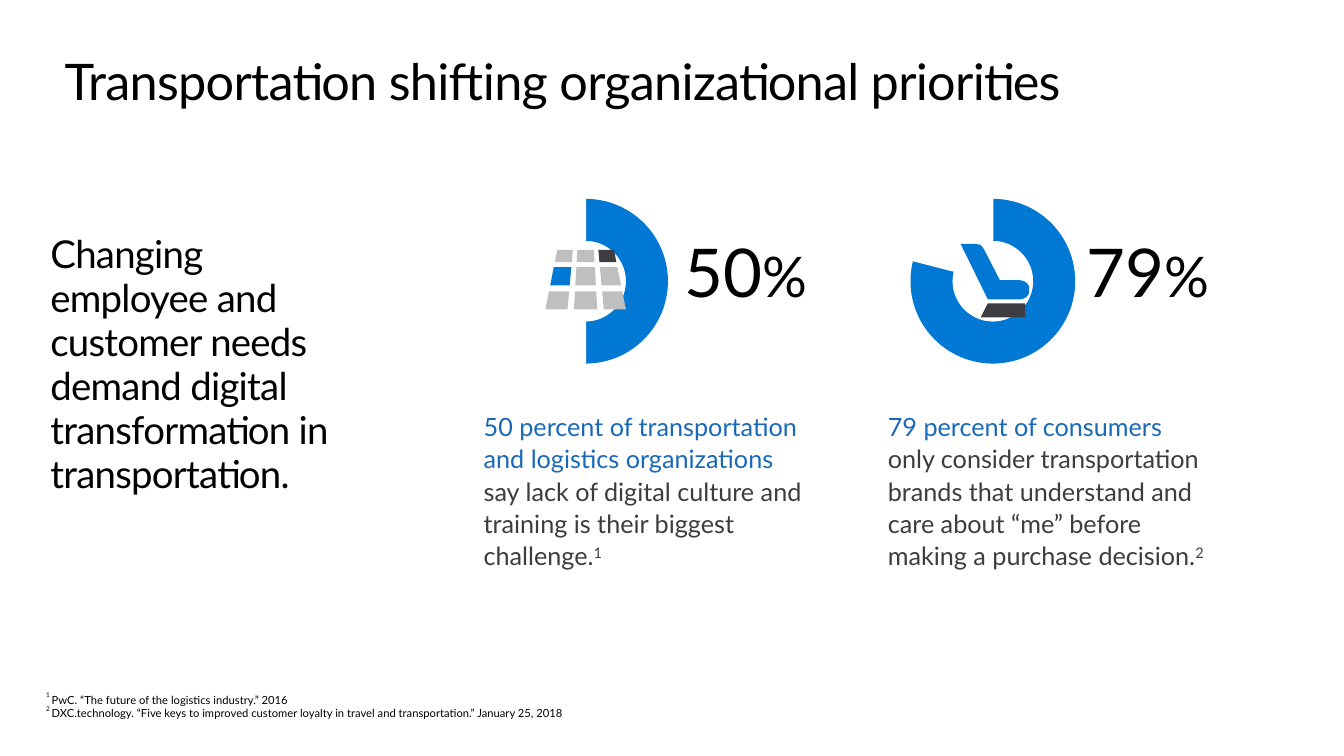
from lxml import etree
from pptx import Presentation
from pptx.chart.data import CategoryChartData
from pptx.dml.color import RGBColor
from pptx.enum.chart import XL_CHART_TYPE
from pptx.enum.text import MSO_AUTO_SIZE
from pptx.oxml.ns import qn
from pptx.util import Emu, Inches, Pt

DOUGHNUT = XL_CHART_TYPE.DOUGHNUT
GROW = MSO_AUTO_SIZE.SHAPE_TO_FIT_TEXT
BLACK = RGBColor(0x00, 0x00, 0x00)
WHITE = RGBColor(0xFF, 0xFF, 0xFF)
BLUE = RGBColor(0x00, 0x78, 0xD4)
LINK_BLUE = RGBColor(0x1A, 0x69, 0xB9)
DARK = RGBColor(0x3C, 0x3C, 0x41)
GRAY = RGBColor(0xBF, 0xBF, 0xBF)
FONT = "Lato"
SLIDE_W, SLIDE_H = Inches(13.333), Inches(7.5)
ROWS = 90
CELL = SLIDE_H / ROWS

CHART_W, CHART_H = 30, 22.8
TILE_ROWS = [(-3.72, -2.28), (-1.68, 0.48), (1.2, 3.36)]
TILE_COLS = [(-1, -0.45), (-0.29, 0.29), (0.45, 1)]
TILE_COLORS = {(0, 2): DARK, (1, 0): BLUE}
SEAT = [(4.32, 0.6), (4.08, 0.24), (3.72, 0), (3.24, -0.12), (0.84, -0.12),
        (-1.08, -3.84), (-1.44, -4.32), (-2.04, -4.44), (-3.84, -4.44),
        (-0.6, 2.16), (3.24, 2.16), (3.72, 2.04), (4.08, 1.8), (4.32, 1.44)]
SEAT_BASE = [(-0.6, 2.64), (-1.44, 4.32), (3.84, 4.32), (3.84, 2.64)]


def cells(*values):
    return [Emu(round(v * CELL)) for v in values]


def add_text(s, box, paragraphs, size, color=BLACK, inset=True,
             line_spacing=None, space_after=None, spc=None):
    tf = s.shapes.add_textbox(*cells(*box)).text_frame
    tf.word_wrap = True
    tf.auto_size = GROW
    if not inset:
        tf.margin_left = tf.margin_right = tf.margin_top = tf.margin_bottom = 0
    for i, runs in enumerate(paragraphs):
        p = tf.paragraphs[0] if i == 0 else tf.add_paragraph()
        p.line_spacing = line_spacing
        p.space_after = space_after
        for text, style in runs:
            r = p.add_run()
            r.text = text
            r.font.name = FONT
            r.font.size = Pt(style.get("size", size))
            r.font.color.rgb = style.get("color", color)
            if spc:
                r.font._element.set("spc", str(spc))
            if "raised" in style:
                r.font._element.set("baseline", str(style["raised"] * 1000))


def add_polygon(s, center, points, color):
    cx, cy = center
    outline = [cells(cx + x, cy + y) for x, y in points]
    builder = s.shapes.build_freeform(*outline[0])
    builder.add_line_segments(outline[1:])
    sp = builder.convert_to_shape()
    sp.shadow.inherit = False
    sp.fill.solid()
    sp.fill.fore_color.rgb = color
    sp.line.fill.background()


def draw_tiles(s, center):
    def half_width(y):
        return 4.12 + 0.2 * y

    for i, (top, bottom) in enumerate(TILE_ROWS):
        for j, (left, right) in enumerate(TILE_COLS):
            upper, lower = half_width(top), half_width(bottom)
            corners = [(left * upper, top), (right * upper, top),
                       (right * lower, bottom), (left * lower, bottom)]
            add_polygon(s, center, corners, TILE_COLORS.get((i, j), GRAY))


def draw_seat(s, center):
    add_polygon(s, center, SEAT_BASE, DARK)
    add_polygon(s, center, SEAT, BLUE)


def add_doughnut(s, box, percent):
    data = CategoryChartData()
    data.categories = ["1", "2"]
    data.add_series("Series 1", [percent, 100 - percent])
    chart = s.shapes.add_chart(DOUGHNUT, *cells(*box), data).chart
    chart.has_legend = False
    chart.has_title = False
    chart.font.name = FONT
    chart.font.size = Pt(10)
    chart.font.color.rgb = BLACK
    plot = chart.plots[0]
    plot.vary_by_categories = True
    for i, color in enumerate([BLUE, WHITE]):
        fmt = plot.series[0].points[i].format
        fmt.fill.solid()
        fmt.fill.fore_color.rgb = color
        fmt.line.color.rgb = color
        fmt.line.width = Pt(0.75)
    doughnut = chart._chartSpace.find(".//" + qn("c:doughnutChart"))
    hole = doughnut.find(qn("c:holeSize"))
    if hole is None:
        hole = etree.SubElement(doughnut, qn("c:holeSize"))
    hole.set("val", "85")


def statistic(s, left, top, percent, draw_icon, figure_dx, body_dx, body_w,
              lead, rest, note):
    add_text(s, (left + figure_dx, top + 4.8, 18.3, 10.92),
             [[(str(percent), {}), ("%", {"size": 40})]], 48)
    add_doughnut(s, (left, top, CHART_W, CHART_H), percent)
    draw_icon(s, (left + CHART_W / 2, top + CHART_H / 2))
    add_text(s, (left + body_dx, top + 26.04, body_w, 20.4),
             [[(lead, {"color": LINK_BLUE}), (rest, {}), (note, {"raised": 30})]],
             18, DARK, line_spacing=1.07, space_after=Pt(8))


def headings(s):
    add_text(s, (7.68, 6, 144.6, 7.32),
             [[("Transportation shifting organizational priorities", {})]],
             36, inset=False, spc=-50)
    add_text(s, (6, 27.6, 37.32, 31.32),
             [[("Changing employee and customer needs demand digital "
                "transformation in transportation.", {})]],
             27.4, inset=False, line_spacing=Pt(31.4), spc=-50)


def footnotes(s, box):
    sources = ["PwC. “The future of the logistics industry.” 2016",
               "DXC.technology. “Five keys to improved customer loyalty in "
               "travel and transportation.” January 25, 2018"]
    add_text(s, box, [[(f"{n} ", {"raised": 55}), (source, {})]
                      for n, source in enumerate(sources, 1)],
             8, line_spacing=0.9)


def main():
    prs = Presentation()
    prs.slide_width, prs.slide_height = SLIDE_W, SLIDE_H
    s = prs.slides.add_slide(prs.slide_layouts[6])
    headings(s)
    statistic(s, 54.72, 22.08, 50, draw_tiles, 25.56, 1.68, 40.32,
              "50 percent of transportation and logistics organizations ",
              "say lack of digital culture and training is their biggest "
              "challenge.", "1")
    statistic(s, 103.2, 22.08, 79, draw_seat, 24.96, 1.32, 40.8,
              "79 percent of consumers ",
              "only consider transportation brands that understand and care "
              "about “me” before making a purchase decision.", "2")
    footnotes(s, (4.32, 81.96, 109.56, 4.32))
    prs.save("out.pptx")


if __name__ == "__main__":
    main()
